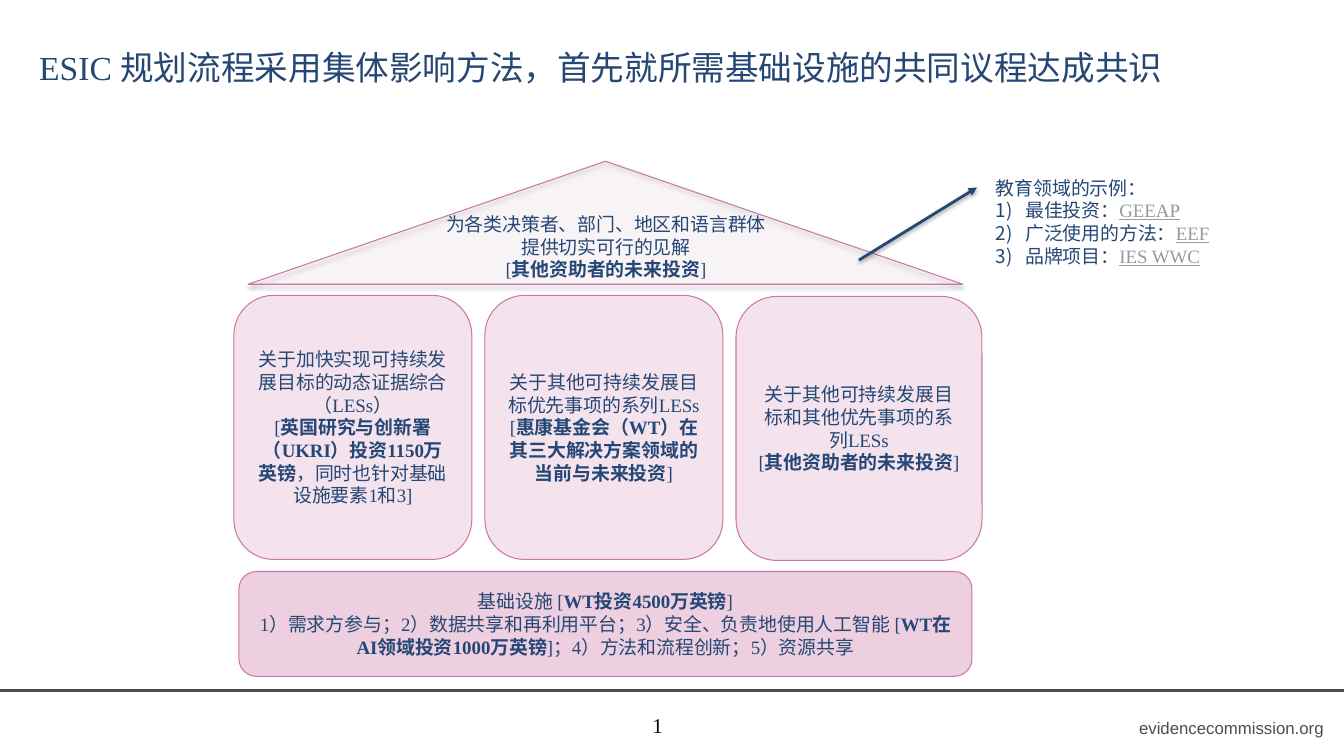
from lxml import etree
from pptx import Presentation
from pptx import util as u
from pptx.dml.color import RGBColor
from pptx.enum import shapes, text
from pptx.oxml.ns import qn

COLORS = {
    "title": "254776", "ink": "244776", "pink": "CC76A6", "link": "939BA2",
    "slate": "464F55", "black": "000000",
}
SERIF, SANS = "Times New Roman", "Arial"
BODY = 13.5
LEFT, CENTER, RIGHT = text.PP_ALIGN.LEFT, text.PP_ALIGN.CENTER, text.PP_ALIGN.RIGHT


def rgb(name):
    return RGBColor.from_string(COLORS[name])


def add_alpha(color_element, percent):
    etree.SubElement(color_element, qn("a:alpha"), val=str(percent * 1000))


def add_shadow(effects, opacity, distance):
    """Put a soft downward shadow into an a:effectLst element."""
    shadow = etree.SubElement(
        effects, qn("a:outerShdw"), blurRad=str(u.Pt(3.1)), dist=str(u.Pt(distance)),
        dir="5400000", rotWithShape="0")
    add_alpha(etree.SubElement(shadow, qn("a:srgbClr"), val=COLORS["black"]), opacity)


class SlideBuilder:
    def __init__(self, slide, font=SERIF, size=BODY, color="ink"):
        self.slide = slide
        self.font, self.size, self.color = font, size, color

    def set_lines(self, frame, lines, align=LEFT, size=None, color=None, font=None,
                  links=False, numbered_from=None):
        """Fill a frame; text between ** marks is bold, or a link if links is set."""
        for index, line in enumerate(lines):
            paragraph = frame.paragraphs[0] if index == 0 else frame.add_paragraph()
            paragraph.alignment = align
            if numbered_from is not None and index >= numbered_from:
                properties = paragraph._p.get_or_add_pPr()
                properties.set("marL", str(u.Inches(0.29)))
                properties.set("indent", str(-u.Inches(0.29)))
                etree.SubElement(properties, qn("a:buAutoNum"), type="arabicParenR")
            paragraph.font.name = font or self.font
            paragraph.font.size = u.Pt(size or self.size)
            paragraph.font.color.rgb = rgb(color or self.color)
            for position, part in enumerate(line.split("**")):
                if not part:
                    continue
                run = paragraph.add_run()
                run.text = part
                if position % 2 and links:
                    run.font.underline = True
                    run.font.color.rgb = rgb("link")
                elif position % 2:
                    run.font.bold = True

    def text_box(self, box, lines, anchor=text.MSO_ANCHOR.TOP, wrap=True, inset=True, **style):
        frame = self.slide.shapes.add_textbox(*map(u.Inches, box)).text_frame
        frame.word_wrap = wrap
        frame.vertical_anchor = anchor
        if not inset:
            frame.margin_left = frame.margin_right = 0
            frame.margin_top = frame.margin_bottom = 0
        self.set_lines(frame, lines, **style)

    def block(self, kind, box, opacity, lines=(), shadow=False):
        block = self.slide.shapes.add_shape(kind, *map(u.Inches, box))
        block.fill.solid()
        block.fill.fore_color.rgb = rgb("pink")
        add_alpha(block._element.spPr.find(qn("a:solidFill"))[0], opacity)
        block.line.color.rgb = rgb("pink")
        block.line.width = u.Pt(0.75)
        block.shadow.inherit = False
        if shadow:
            add_shadow(block._element.spPr.find(qn("a:effectLst")), 35, 1.8)
        block.text_frame.word_wrap = True
        block.text_frame.vertical_anchor = text.MSO_ANCHOR.MIDDLE
        self.set_lines(block.text_frame, lines, align=CENTER)

    def line(self, start, end, color, arrow=False):
        line = self.slide.shapes.add_connector(
            shapes.MSO_CONNECTOR.STRAIGHT, *map(u.Inches, start + end))
        line.line.color.rgb = rgb(color)
        line.line.width = u.Pt(2)
        properties = line._element.spPr
        effects = etree.SubElement(properties, qn("a:effectLst"))
        if arrow:
            etree.SubElement(properties.find(qn("a:ln")), qn("a:tailEnd"), type="triangle")
            add_shadow(effects, 38, 1.6)


def main():
    deck = Presentation()
    deck.slide_width, deck.slide_height = u.Inches(13.33), u.Inches(7.5)
    builder = SlideBuilder(deck.slides.add_slide(deck.slide_layouts[6]))
    middle = text.MSO_ANCHOR.MIDDLE
    rounded = shapes.MSO_SHAPE.ROUNDED_RECTANGLE

    builder.line((0, 6.85), (13.33, 6.85), "slate")
    builder.text_box((11.17, 7.07, 2.06, 0.3), ["evidencecommission.org"],
                     align=RIGHT, size=12, color="slate", font=SANS)
    builder.text_box((0.29, 0.12, 12.8, 1.1),
                     ["ESIC 规划流程采用集体影响方法，首先就所需基础设施的共同议程达成共识"],
                     anchor=middle, size=24, color="title")
    builder.text_box((6.47, 7.07, 0.39, 0.25), ["1"], anchor=middle, inset=False,
                     size=15, color="black")

    builder.block(rounded, (2.37, 5.67, 7.27, 1.04), 35, [
        "基础设施 [**WT投资4500万英镑**]",
        "1）需求方参与；2）数据共享和再利用平台；3）安全、负责地使用人工智能 ["
        "**WT在AI领域投资1000万英镑**]；4）方法和流程创新；5）资源共享",
    ])

    pillars = [
        ((2.32, 2.93, 2.36, 2.62), [
            "关于加快实现可持续发展目标的动态证据综合（LESs）",
            "[**英国研究与创新署（UKRI）投资1150万英镑**，同时也针对基础设施要素1和3]"]),
        ((4.81, 2.93, 2.36, 2.62), [
            "关于其他可持续发展目标优先事项的系列LESs",
            "[**惠康基金会（WT）在其三大解决方案领域的当前与未来投资**]"]),
        ((7.3, 2.94, 2.44, 2.62), [
            "关于其他可持续发展目标和其他优先事项的系列LESs",
            "[**其他资助者的未来投资**]"]),
    ]
    for box, lines in pillars:
        builder.block(rounded, box, 20, lines)

    builder.block(shapes.MSO_SHAPE.ISOSCELES_TRIANGLE, (2.46, 1.6, 7.09, 1.22), 5, shadow=True)
    builder.text_box((4.3, 2.06, 3.42, 0.78), [
        "为各类决策者、部门、地区和语言群体",
        "提供切实可行的见解",
        "[**其他资助者的未来投资**]",
    ], wrap=False, align=CENTER)

    builder.text_box((9.78, 1.7, 3.22, 1.01), [
        "教育领域的示例：",
        "最佳投资：**GEEAP**",
        "广泛使用的方法：**EEF**",
        "品牌项目：**IES WWC**",
    ], links=True, numbered_from=1)
    builder.line((8.52, 2.58), (9.69, 1.86), "ink", arrow=True)

    deck.save("out.pptx")


if __name__ == "__main__":
    main()
